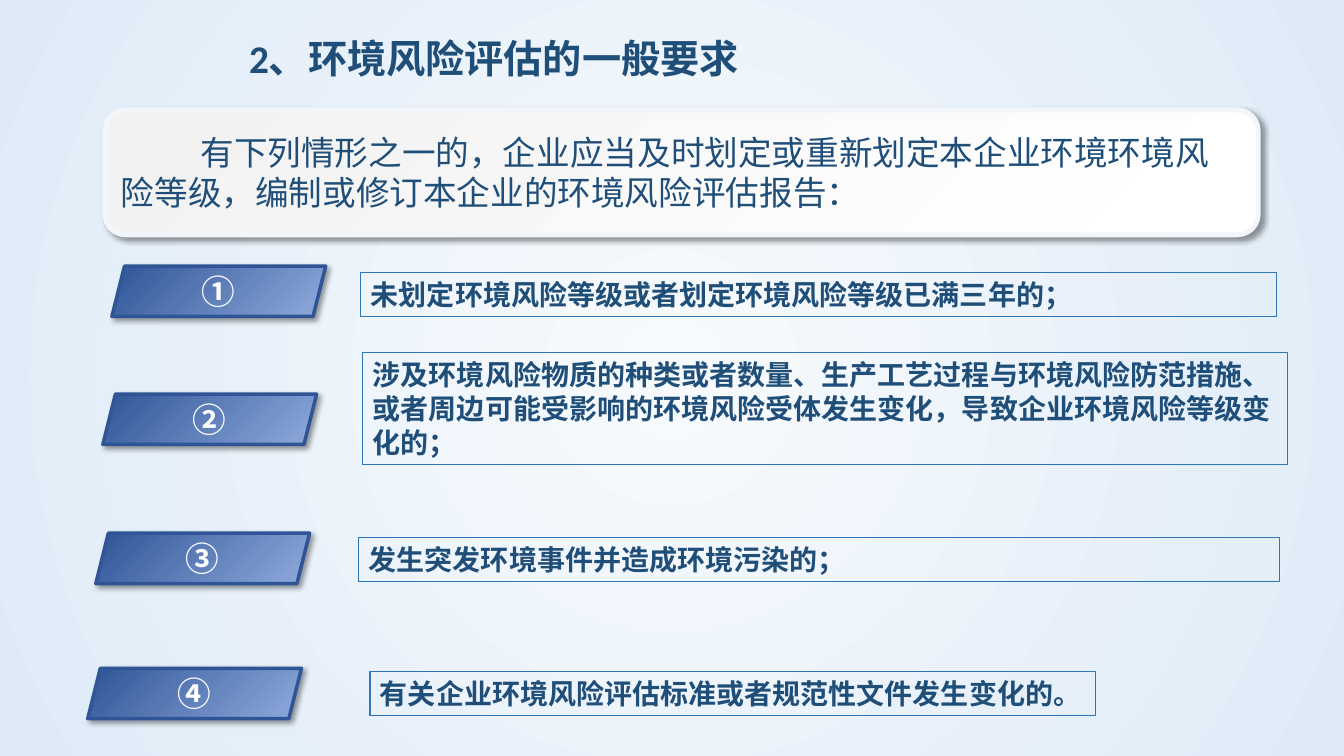
from lxml.etree import SubElement
from pptx import Presentation
from pptx.dml.color import RGBColor
from pptx.enum.shapes import MSO_SHAPE as Preset
from pptx.enum.text import MSO_ANCHOR as Anchor, MSO_AUTO_SIZE as AutoSize, PP_ALIGN as Align
from pptx.oxml.ns import qn
from pptx.util import Inches, Pt

COLORS = {
    "center": "F7FAFD", "edge": "DEEBF7", "text": "1F4E79", "white": "FFFFFF",
    "badge_dark": "2F5597", "badge_light": "8FAADC", "frame": "2E75B6",
    "panel_gray": "F2F2F2", "panel_line": "F2F6FB", "shadow": "000000",
}


def write(shape, text, size=20, bold=True, color="text", font="Calibri",
          align=Align.LEFT, anchor=Anchor.TOP, indent=0):
    frame = shape.text_frame
    frame.word_wrap = True
    frame.auto_size = AutoSize.NONE
    frame.vertical_anchor = anchor
    paragraph = frame.paragraphs[0]
    paragraph.alignment = align
    paragraph._p.get_or_add_pPr().set("indent", str(Inches(indent)))
    run = paragraph.add_run()
    run.text = text
    run.font.size = Pt(size)
    run.font.bold = bold
    run.font.name = font
    run.font.color.rgb = RGBColor.from_string(COLORS[color])
    SubElement(run.font._element, qn("a:ea"), typeface=font)


def add_box(preset, left, top, width, height, line, line_width, gradient=None):
    shape = slide.shapes.add_shape(
        preset, Inches(left), Inches(top), Inches(width), Inches(height))
    shape.line.color.rgb = RGBColor.from_string(COLORS[line])
    shape.line.width = Pt(line_width)
    shape.shadow.inherit = False
    if gradient is None:
        shape.fill.background()
        return shape
    shape.fill.gradient()
    shape.fill.gradient_angle = 315
    for stop, name in zip(shape.fill.gradient_stops, gradient):
        stop.color.rgb = RGBColor.from_string(COLORS[name])
    effects = shape._element.spPr.find(qn("a:effectLst"))
    shadow = SubElement(effects, qn("a:outerShdw"), blurRad=str(Pt(4)),
                        dist=str(Pt(3)), dir="2700000", algn="tl", rotWithShape="0")
    shadow_color = SubElement(shadow, qn("a:srgbClr"), val=COLORS["shadow"])
    SubElement(shadow_color, qn("a:alpha"), val="40000")
    return shape


presentation = Presentation()
presentation.slide_width = Inches(13.33)
presentation.slide_height = Inches(7.5)
slide = presentation.slides.add_slide(presentation.slide_layouts[5])

background = slide.background.fill
background.gradient()
for stop, name in zip(background.gradient_stops, ("center", "edge")):
    stop.color.rgb = RGBColor.from_string(COLORS[name])
gradient_fill = slide.element.find(".//" + qn("a:gradFill"))
gradient_fill.remove(gradient_fill.find(qn("a:lin")))
circle = SubElement(gradient_fill, qn("a:path"), {"path": "circle"})
SubElement(circle, qn("a:fillToRect"), l="50000", t="50000", r="50000", b="50000")

title = slide.shapes.title
title.left, title.top = Inches(2.37), Inches(0.29)
title.width, title.height = Inches(6.32), Inches(0.57)
write(title, "2、环境风险评估的一般要求", size=28)

panel = add_box(Preset.ROUNDED_RECTANGLE, 1.04, 1.09, 11.44, 1.24,
                "panel_line", 3.5, ("panel_gray", "white"))
write(panel, "有下列情形之一的，企业应当及时划定或重新划定本企业环境环境风险等级，"
      "编制或修订本企业的环境风险评估报告：",
      size=24, bold=False, anchor=Anchor.MIDDLE, indent=0.79)

conditions = [
    ("①", 1.11, 2.64, (3.58, 2.7, 9.08, 0.44),
     "未划定环境风险等级或者划定环境风险等级已满三年的；"),
    ("②", 1.02, 3.91, (3.6, 3.5, 9.17, 1.11),
     "涉及环境风险物质的种类或者数量、生产工艺过程与环境风险防范措施、"
     "或者周边可能受影响的环境风险受体发生变化，导致企业环境风险等级变化的；"),
    ("③", 0.95, 5.29, (3.56, 5.33, 9.13, 0.44),
     "发生突发环境事件并造成环境污染的；"),
    ("④", 0.87, 6.63, (3.67, 6.66, 7.2, 0.44),
     "有关企业环境风险评估标准或者规范性文件发生变化的。"),
]
for number, left, top, label_place, text in conditions:
    badge = add_box(Preset.PARALLELOGRAM, left, top, 2.12, 0.5,
                    "badge_dark", 2.5, ("badge_dark", "badge_light"))
    write(badge, number, size=24, color="white", font="Noto Sans CJK SC",
          align=Align.CENTER, anchor=Anchor.MIDDLE)
    label = add_box(Preset.RECTANGLE, *label_place, "frame", 0.75)
    write(label, text)

presentation.save("out.pptx")
